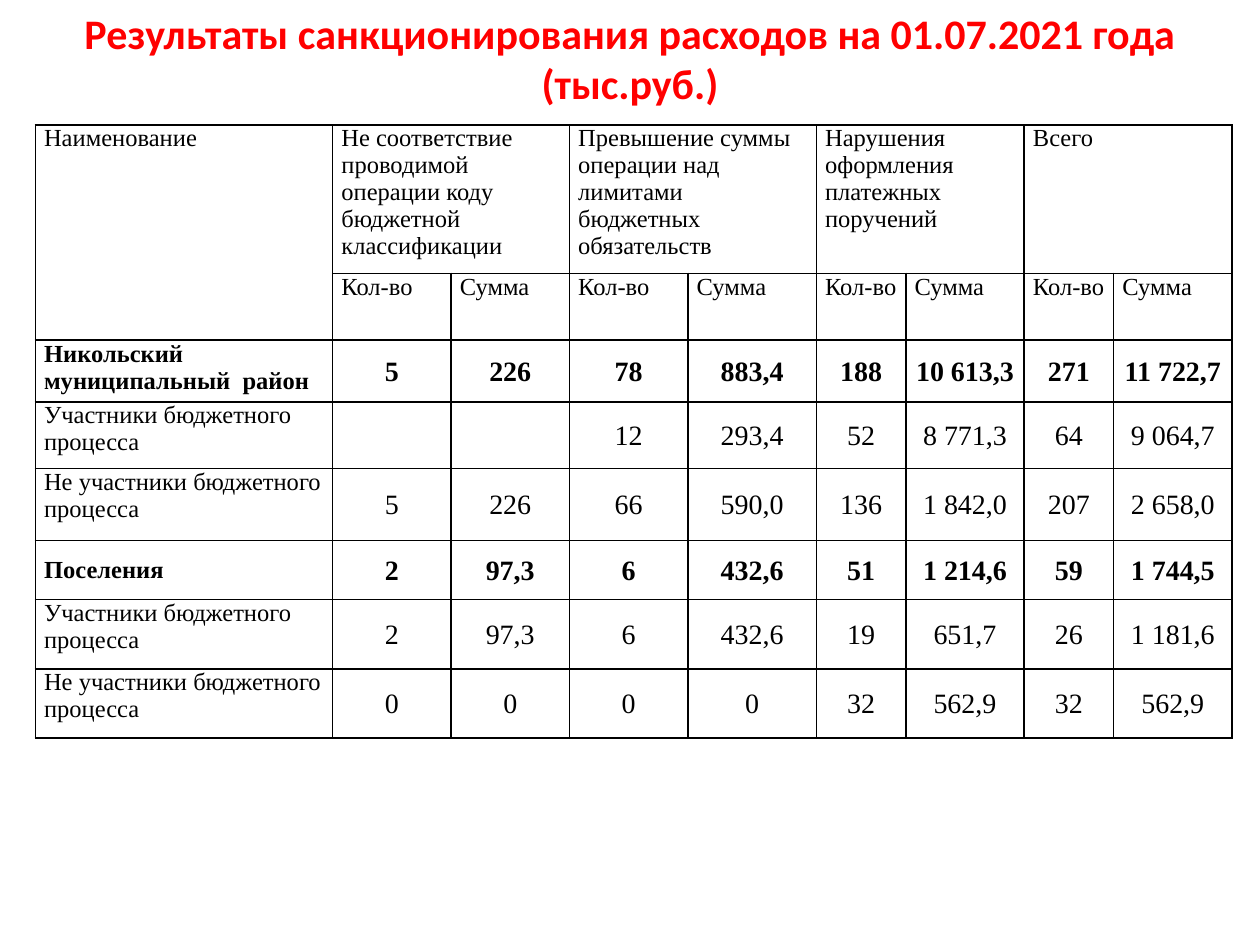
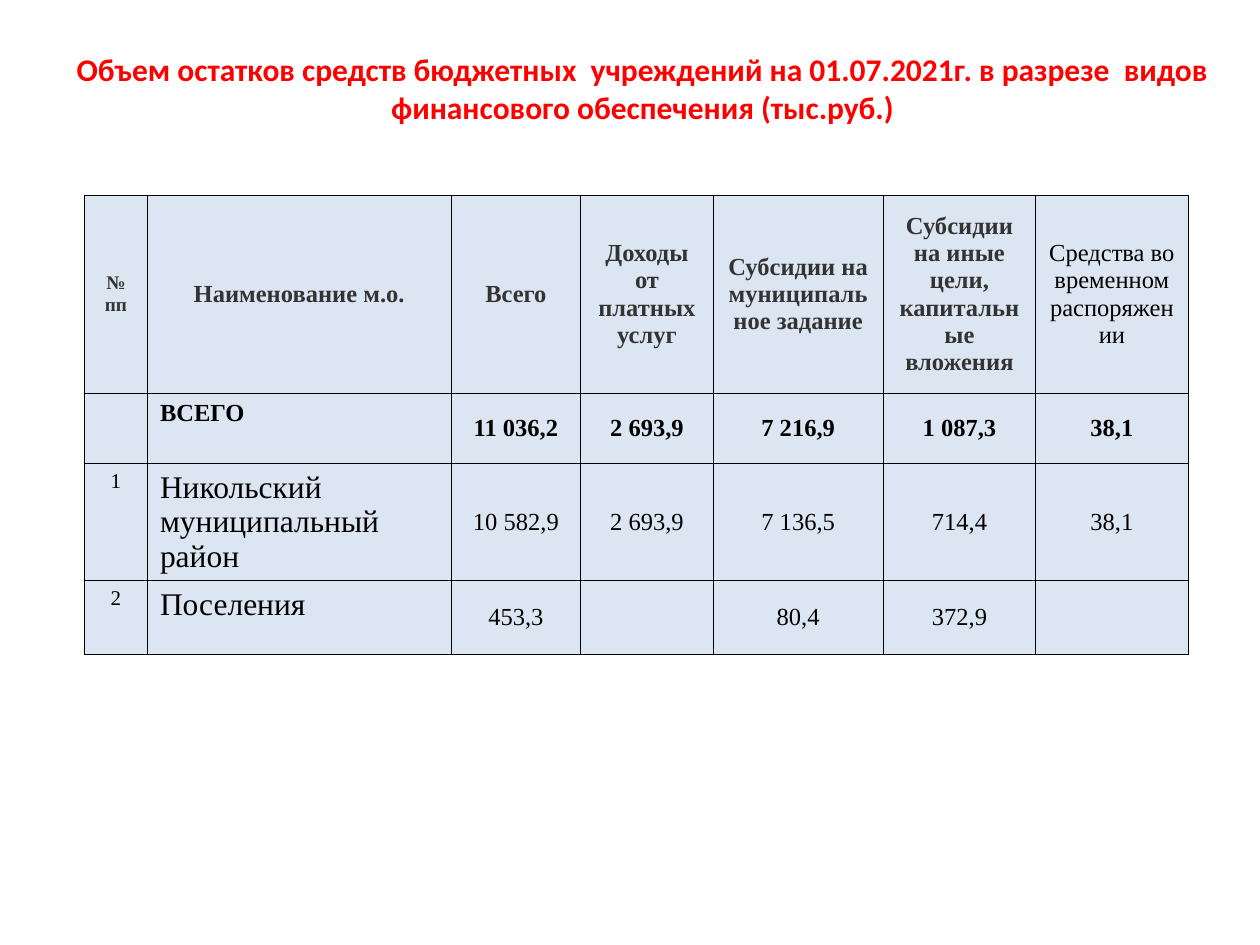
from dataclasses import dataclass, replace
from typing import Optional

from lxml.etree import SubElement
from pptx import Presentation
from pptx.dml.color import RGBColor
from pptx.enum.text import MSO_ANCHOR as Anchor, MSO_AUTO_SIZE as AutoSize, PP_ALIGN as Align
from pptx.oxml.ns import qn
from pptx.util import Inches, Pt

RED = RGBColor(0xFF, 0x00, 0x00)
BLACK = RGBColor(0x00, 0x00, 0x00)
GREY = RGBColor(0x33, 0x33, 0x33)
PALE_BLUE = RGBColor(0xDC, 0xE6, 0xF2)
TITLE_FONT, TABLE_FONT = "Calibri", "Times New Roman"


@dataclass(frozen=True)
class CellStyle:
    """Look of the text in a table cell."""
    size: int = 14
    bold: bool = False
    color: RGBColor = BLACK
    align: Align = Align.CENTER
    anchor: Anchor = Anchor.MIDDLE
    margins: tuple[float, float, float, float] = (0.1, 0.05, 0.1, 0.05)


@dataclass(frozen=True)
class Title:
    """Slide title with its frame and text size."""
    text: str
    box: tuple[float, float, float, float]
    size: int


@dataclass(frozen=True)
class Grid:
    """Place, column and row sizes, border and fill of a table."""
    left: float
    top: float
    cols: list[float]
    rows: list[float]
    border: float
    fill: Optional[RGBColor] = None


LABEL = CellStyle(align=Align.LEFT, anchor=Anchor.TOP, margins=(0.07, 0, 0.07, 0))
LABEL_JUSTIFIED = replace(LABEL, align=Align.JUSTIFY)
AMOUNT = CellStyle(size=16, margins=(0.01, 0.01, 0.01, 0))
BALANCE = CellStyle()
HEADER = CellStyle(bold=True, color=GREY)
NUMBER = CellStyle(size=12, anchor=Anchor.TOP)
NAME = CellStyle(size=18, align=Align.LEFT, anchor=Anchor.TOP)

CONTROL_TITLE = Title("Результаты санкционирования расходов на 01.07.2021 года (тыс.руб.)",
                      (0, 0.01, 10, 0.75), 24)
CONTROL_GRID = Grid(0.28, 0.99, [2.36, 0.94, 0.94, 0.94, 1.02, 0.71, 0.94, 0.71, 0.94],
                    [1.18, 0.53, 0.49, 0.53, 0.57, 0.47, 0.55, 0.55], 1)
VIOLATIONS = [
    ("Не соответствие проводимой операции коду бюджетной классификации", LABEL),
    ("Превышение суммы операции над лимитами бюджетных обязательств", LABEL),
    ("Нарушения оформления платежных поручений", LABEL_JUSTIFIED),
    ("Всего", LABEL_JUSTIFIED),
]
PARTICIPANTS = "Участники бюджетного процесса"
OTHERS = "Не участники бюджетного процесса"
DISTRICT_TOTAL = replace(LABEL_JUSTIFIED, bold=True)
SETTLEMENTS_TOTAL = replace(DISTRICT_TOTAL, anchor=Anchor.MIDDLE)
CONTROL_ROWS = [
    ("Никольский муниципальный  район", DISTRICT_TOTAL,
     ["5", "226", "78", "883,4", "188", "10 613,3", "271", "11 722,7"]),
    (PARTICIPANTS, LABEL, ["", "", "12", "293,4", "52", "8 771,3", "64", "9 064,7"]),
    (OTHERS, LABEL, ["5", "226", "66", "590,0", "136", "1 842,0", "207", "2 658,0"]),
    ("Поселения", SETTLEMENTS_TOTAL,
     ["2", "97,3", "6", "432,6", "51", "1 214,6", "59", "1 744,5"]),
    (PARTICIPANTS, LABEL, ["2", "97,3", "6", "432,6", "19", "651,7", "26", "1 181,6"]),
    (OTHERS, LABEL, ["0", "0", "0", "0", "32", "562,9", "32", "562,9"]),
]

BALANCE_TITLE = Title("Объем остатков средств бюджетных  учреждений на 01.07.2021г. в разрезе  видов "
                      "финансового обеспечения (тыс.руб.)", (0.2, 0.35, 9.8, 0.88), 18)
BALANCE_GRID = Grid(0.67, 1.55, [0.5, 2.41, 1.03, 1.05, 1.35, 1.21, 1.21],
                    [1.57, 0.56, 0.93, 0.58], 0.5, PALE_BLUE)
BALANCE_HEADERS = [
    ("№ пп", replace(HEADER, size=11)),
    ("Наименование м.о.", HEADER),
    ("Всего", HEADER),
    ("Доходы от платных услуг", HEADER),
    ("Субсидии на муниципальное задание", HEADER),
    ("Субсидии на иные цели, капитальные вложения", HEADER),
    ("Средства во временном распоряжении", BALANCE),
]
BALANCE_ROWS = [
    ("", "ВСЕГО", replace(NAME, size=14, bold=True),
     ["11 036,2", "2 693,9", "7 216,9", "1 087,3", "38,1"]),
    ("1", "Никольский муниципальный район", NAME,
     ["10 582,9", "2 693,9", "7 136,5", "714,4", "38,1"]),
    ("2", "Поселения", NAME, ["453,3", "", "80,4", "372,9", ""]),
]


def add_titled_slide(prs, title: Title):
    """Add a title-only slide and format its title."""
    s = prs.slides.add_slide(prs.slide_layouts[5])
    sp = s.shapes.title
    sp.left, sp.top, sp.width, sp.height = map(Inches, title.box)
    tf = sp.text_frame
    tf.text = title.text
    tf.word_wrap = True
    tf.auto_size = AutoSize.NONE
    tf.vertical_anchor = Anchor.TOP
    p = tf.paragraphs[0]
    p.alignment = Align.CENTER
    font = p.runs[0].font
    font.name, font.size, font.bold = TITLE_FONT, Pt(title.size), True
    font.color.rgb = RED
    return s


def set_borders(cell, width: float) -> None:
    """Draw a black line on all four sides of a cell."""
    tc_pr = cell._tc.get_or_add_tcPr()
    for side in ("lnL", "lnR", "lnT", "lnB"):
        ln = SubElement(tc_pr, qn(f"a:{side}"), w=str(Pt(width)))
        fill = SubElement(ln, qn("a:solidFill"))
        SubElement(fill, qn("a:srgbClr"), val=str(BLACK))


def add_grid(s, grid: Grid):
    """Add an empty bordered table."""
    frame = s.shapes.add_table(len(grid.rows), len(grid.cols), Inches(grid.left), Inches(grid.top),
                               Inches(sum(grid.cols)), Inches(sum(grid.rows)))
    table = frame.table
    table.first_row = table.horz_banding = False
    for col, width in zip(table.columns, grid.cols):
        col.width = Inches(width)
    for row, height in zip(table.rows, grid.rows):
        row.height = Inches(height)
    for cell in table.iter_cells():
        set_borders(cell, grid.border)
        if grid.fill is None:
            cell.fill.background()
        else:
            cell.fill.solid()
            cell.fill.fore_color.rgb = grid.fill
    return table


def write_cell(cell, text: str, style: CellStyle) -> None:
    """Put styled text in a cell."""
    cell.margin_left, cell.margin_top, cell.margin_right, cell.margin_bottom = map(Inches, style.margins)
    cell.vertical_anchor = style.anchor
    p = cell.text_frame.paragraphs[0]
    p.alignment = style.align
    if not text:
        return
    p.text = text
    font = p.runs[0].font
    font.name, font.size, font.bold = TABLE_FONT, Pt(style.size), style.bold
    font.color.rgb = style.color


def build_control_slide(prs) -> None:
    """Build the slide with the results of expenditure control."""
    table = add_grid(add_titled_slide(prs, CONTROL_TITLE), CONTROL_GRID)
    table.cell(0, 0).merge(table.cell(1, 0))
    write_cell(table.cell(0, 0), "Наименование", LABEL_JUSTIFIED)
    for i, (text, style) in enumerate(VIOLATIONS):
        c = 1 + 2 * i
        table.cell(0, c).merge(table.cell(0, c + 1))
        write_cell(table.cell(0, c), text, style)
        write_cell(table.cell(1, c), "Кол-во", LABEL_JUSTIFIED)
        write_cell(table.cell(1, c + 1), "Сумма", LABEL_JUSTIFIED)
    for r, (label, style, values) in enumerate(CONTROL_ROWS, 2):
        write_cell(table.cell(r, 0), label, style)
        for c, value in enumerate(values, 1):
            write_cell(table.cell(r, c), value, replace(AMOUNT, bold=style.bold))


def build_balance_slide(prs) -> None:
    """Build the slide with the balances of budget institutions."""
    table = add_grid(add_titled_slide(prs, BALANCE_TITLE), BALANCE_GRID)
    for c, (text, style) in enumerate(BALANCE_HEADERS):
        write_cell(table.cell(0, c), text, style)
    for r, (number, name, style, values) in enumerate(BALANCE_ROWS, 1):
        write_cell(table.cell(r, 0), number, NUMBER)
        write_cell(table.cell(r, 1), name, style)
        for c, value in enumerate(values, 2):
            write_cell(table.cell(r, c), value, replace(BALANCE, bold=style.bold))


def main() -> None:
    """Build and save the presentation."""
    prs = Presentation()
    prs.slide_width, prs.slide_height = Inches(10), Inches(7.5)
    build_control_slide(prs)
    build_balance_slide(prs)
    prs.save("out.pptx")


if __name__ == "__main__":
    main()
